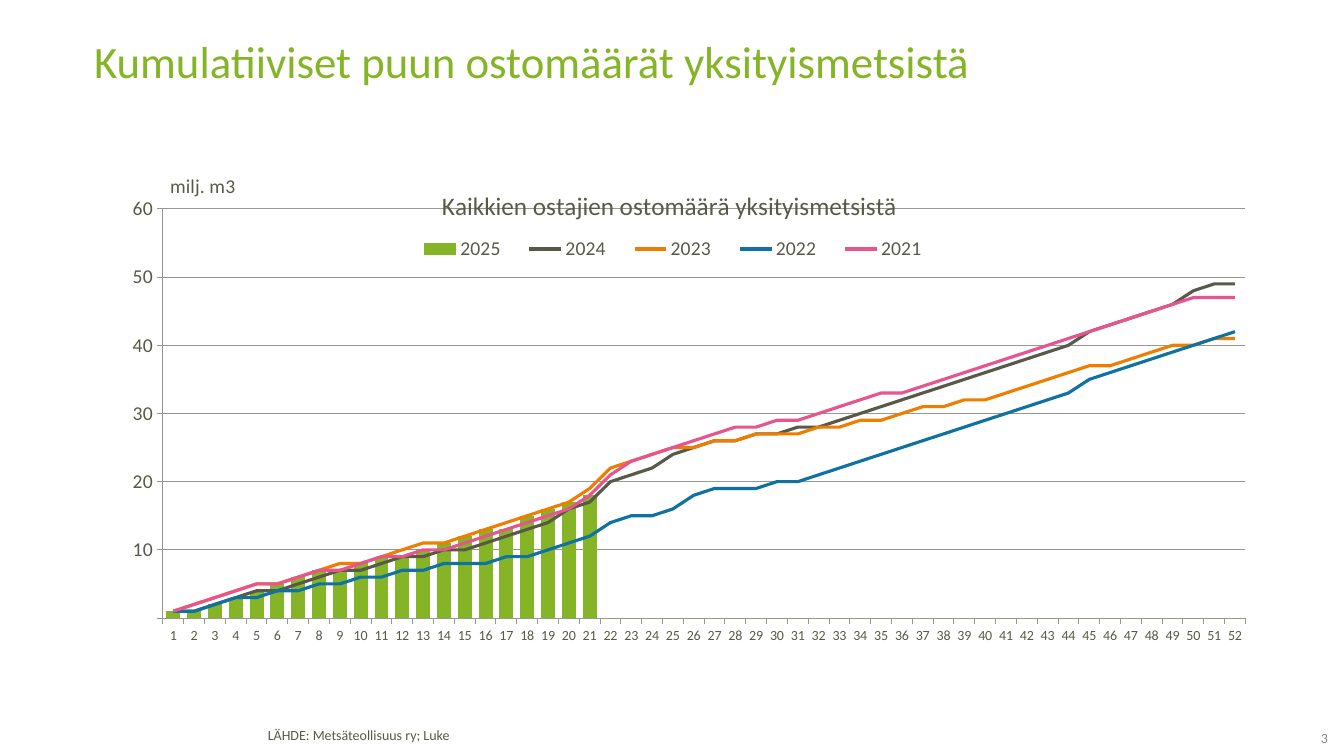
from lxml import etree
from pptx import Presentation, util as u
from pptx.chart.data import CategoryChartData
from pptx.dml.color import RGBColor
from pptx.enum import chart as ch, text as tx
from pptx.oxml.ns import qn

WIDE, HIGH = 1344, 756
SCALE = 12192000 / WIDE
HUES = {"green": "85B526", "text": "59594A", "num": "878787", "grid": "969790",
        "orange": "EF7D00", "blue": "0F72A2", "pink": "E8548D"}
MILLION = 1000000
WEEKS = 52
# Cumulative purchases by week, millions of m3
YEARS = {
    "2025": ("green", [1, 1, 2, 3, 4, 5, 6, 7, 7, 8, 9, 9, 10, 11, 12, 13, 13, 15, 16, 17, 18]),
    "2024": ("text", [
        1, 1, 2, 3, 4, 4, 5, 6, 7, 7, 8, 9, 9, 10, 10, 11, 12, 13, 14, 16, 17, 20, 21, 22, 24, 25,
        26, 26, 27, 27, 28, 28, 29, 30, 31, 32, 33, 34, 35, 36, 37, 38, 39, 40, 42, 43, 44, 45, 46,
        48, 49, 49]),
    "2023": ("orange", [
        1, 2, 3, 4, 5, 5, 6, 7, 8, 8, 9, 10, 11, 11, 12, 13, 14, 15, 16, 17, 19, 22, 23, 24, 25, 25,
        26, 26, 27, 27, 27, 28, 28, 29, 29, 30, 31, 31, 32, 32, 33, 34, 35, 36, 37, 37, 38, 39, 40,
        40, 41, 41]),
    "2022": ("blue", [
        1, 1, 2, 3, 3, 4, 4, 5, 5, 6, 6, 7, 7, 8, 8, 8, 9, 9, 10, 11, 12, 14, 15, 15, 16, 18,
        19, 19, 19, 20, 20, 21, 22, 23, 24, 25, 26, 27, 28, 29, 30, 31, 32, 33, 35, 36, 37, 38, 39,
        40, 41, 42]),
    "2021": ("pink", [
        1, 2, 3, 4, 5, 5, 6, 7, 7, 8, 9, 9, 10, 10, 11, 12, 13, 14, 15, 16, 18, 21, 23, 24, 25, 26,
        27, 28, 28, 29, 29, 30, 31, 32, 33, 33, 34, 35, 36, 37, 38, 39, 40, 41, 42, 43, 44, 45, 46,
        47, 47, 47]),
}


def px(n):
    return u.Emu(round(n * SCALE))


def rgb(name):
    return RGBColor.from_string(HUES[name])


def put(obj, **vals):
    for key, val in vals.items():
        setattr(obj, key, val)


def style(font, size, hue):
    put(font, name="Calibri", size=u.Pt(size), bold=False)
    font.color.rgb = rgb(hue)


def write(frame, words, size, hue, **para):
    frame.text = words
    line = frame.paragraphs[0]
    put(line, **para)
    style(line.runs[0].font, size, hue)


def head(slide, box, words):
    title = slide.shapes.title
    put(title, **dict(zip(("left", "top", "width", "height"), map(px, box))))
    put(title.text_frame, vertical_anchor=tx.MSO_ANCHOR.TOP, word_wrap=True,
        auto_size=tx.MSO_AUTO_SIZE.NONE)
    write(title.text_frame, words, 32, "green", alignment=tx.PP_ALIGN.LEFT, line_spacing=0.8)


def label(slide, box, words, hue, frame, para):
    field = slide.shapes.add_textbox(*map(px, box)).text_frame
    put(field, word_wrap=True, **frame)
    write(field, words, 10, hue, **para)


def place(node, **vals):
    """Set a manual layout on a chart part, as fractions of the chart."""
    for old in node.findall(qn("c:layout")):
        node.remove(old)
    lay = etree.Element(qn("c:layout"))
    man = etree.SubElement(lay, qn("c:manualLayout"))
    over = node.find(qn("c:overlay"))
    if over is None:
        etree.SubElement(man, qn("c:layoutTarget")).set("val", "inner")
        node.insert(0, lay)
    else:
        over.addprevious(lay)
    for key in ("xMode", "yMode"):
        etree.SubElement(man, qn("c:" + key)).set("val", "edge")
    for key, val in vals.items():
        etree.SubElement(man, qn("c:" + key)).set("val", str(val))


def split(chart):
    """Move every series but the first into a line plot on the same axes."""
    bars = chart.plots[0]._element
    line = etree.Element(qn("c:lineChart"))
    bars.addnext(line)
    etree.SubElement(line, qn("c:grouping")).set("val", "standard")
    etree.SubElement(line, qn("c:varyColors")).set("val", "0")
    for ser in bars.findall(qn("c:ser"))[1:]:
        for flag in ser.findall(qn("c:invertIfNegative")):
            ser.remove(flag)
        line.append(ser)
    etree.SubElement(line, qn("c:marker")).set("val", "1")
    for axis in bars.findall(qn("c:axId")):
        etree.SubElement(line, qn("c:axId")).set("val", axis.get("val"))


def paint(chart):
    put(chart.plots[0], gap_width=50, vary_by_categories=False)
    for ser in chart.plots[0].series:
        ser.format.fill.solid()
        ser.format.fill.fore_color.rgb = rgb(YEARS[ser.name][0])
    for ser in chart.plots[1].series:
        ser.smooth = False
        ser.marker.style = ch.XL_MARKER_STYLE.NONE
        ser.format.line.width = u.Pt(2.25)
        ser.format.line.color.rgb = rgb(YEARS[ser.name][0])


def scales(chart):
    cat, val = chart.category_axis, chart.value_axis
    put(val, minimum_scale=0, maximum_scale=60 * MILLION, major_unit=10 * MILLION,
        has_major_gridlines=True)
    put(val.tick_labels, number_format="#,,", number_format_is_linked=False)
    for axis, size in ((cat, 10), (val, 14)):
        put(axis, major_tick_mark=ch.XL_TICK_MARK.OUTSIDE,
            minor_tick_mark=ch.XL_TICK_MARK.NONE)
        style(axis.tick_labels.font, size, "text")
        axis.format.line.color.rgb = rgb("grid")
    val.major_gridlines.format.line.color.rgb = rgb("grid")
    unit = val.axis_title
    write(unit.text_frame, "milj. m3", 14, "text")
    unit.text_frame._txBody.bodyPr.set("rot", "0")
    unit.text_frame._txBody.bodyPr.set("vert", "horz")
    place(unit._element, x=0.07, y=0.02)


def graph(slide, box):
    data = CategoryChartData()
    data.categories = [str(n + 1) for n in range(WEEKS)]
    for year, (_, vals) in YEARS.items():
        full = vals + [0] * (WEEKS - len(vals))
        data.add_series(year, [v * MILLION for v in full])
    chart = slide.shapes.add_chart(
        ch.XL_CHART_TYPE.COLUMN_CLUSTERED, *map(px, box), data).chart
    style(chart.font, 10, "text")
    split(chart)
    paint(chart)
    scales(chart)
    place(chart._chartSpace.chart.plotArea, x=0.067, y=0.098, w=0.919, h=0.787)
    put(chart, has_title=True, has_legend=True)
    write(chart.chart_title.text_frame, "Kaikkien ostajien ostomäärä yksityismetsistä",
          18, "text")
    place(chart.chart_title._element, x=0.3, y=0.05)
    put(chart.legend, position=ch.XL_LEGEND_POSITION.RIGHT, include_in_layout=False)
    style(chart.legend.font, 14, "text")
    place(chart.legend._element, x=0.27, y=0.14, w=0.46, h=0.07)


def main():
    deck = Presentation()
    put(deck, slide_width=px(WIDE), slide_height=px(HIGH))
    slide = deck.slides.add_slide(deck.slide_layouts[5])
    head(slide, (84, 39, 1178, 99), "Kumulatiiviset puun ostomäärät yksityismetsistä")
    graph(slide, (84, 158, 1178, 520))
    label(slide, (258, 724, 724, 27), "LÄHDE: Metsäteollisuus ry; Luke", "text",
          {}, {"line_spacing": 0.85})
    label(slide, (1275, 730, 53, 19), "3", "num",
          {"vertical_anchor": tx.MSO_ANCHOR.MIDDLE, "margin_left": 0, "margin_right": 0,
           "margin_top": 0, "margin_bottom": px(4)},
          {"alignment": tx.PP_ALIGN.RIGHT})
    deck.save("out.pptx")


if __name__ == "__main__":
    main()
